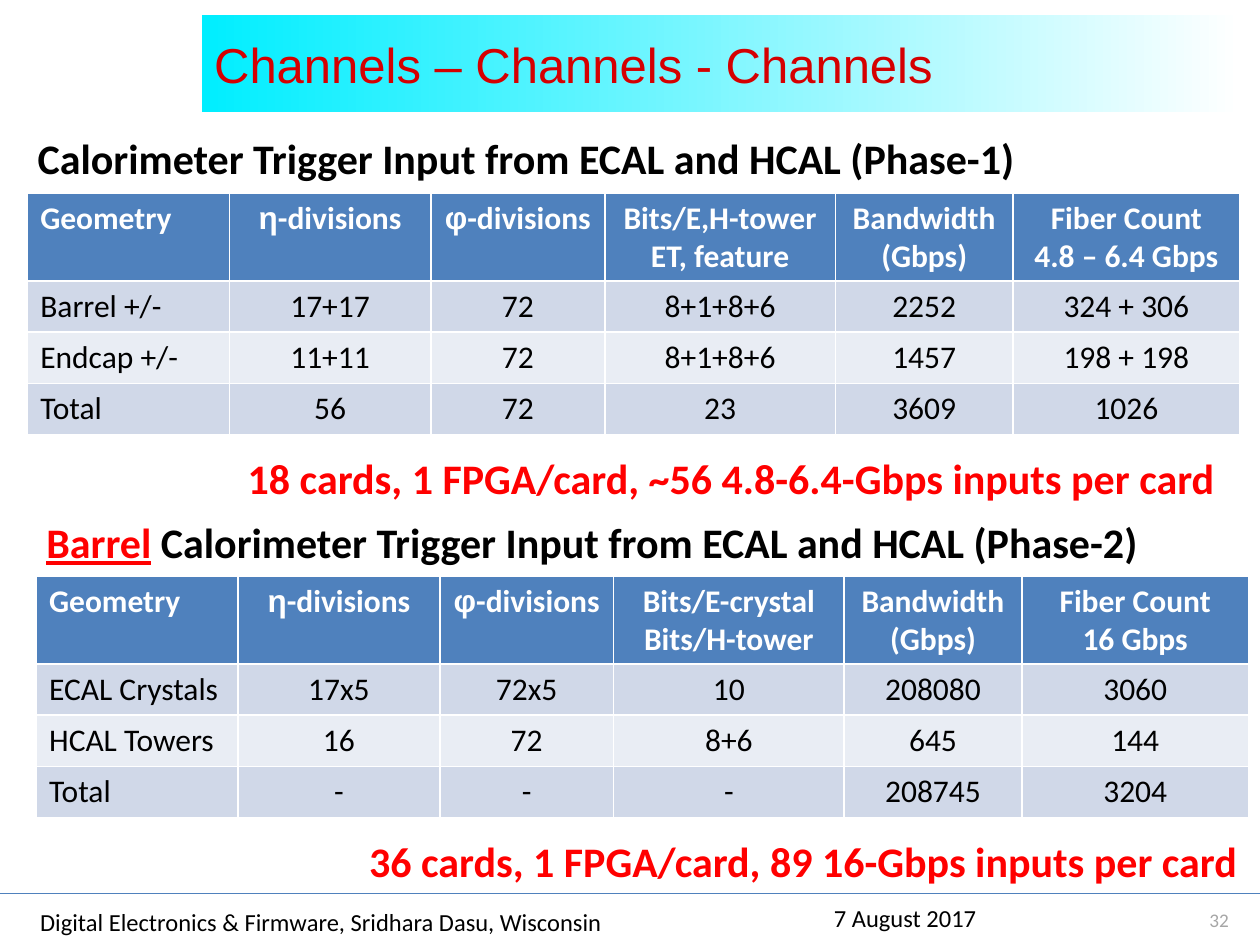
"""Build the slide on calorimeter trigger channel counts for Phase-1 and Phase-2."""
from lxml.etree import SubElement
from pptx import Presentation
from pptx.dml.color import RGBColor
from pptx.enum.shapes import MSO_CONNECTOR
from pptx.enum.text import MSO_ANCHOR as Anchor, PP_ALIGN as Align
from pptx.oxml.ns import qn
from pptx.util import Inches, Pt

BLACK = RGBColor(0x00, 0x00, 0x00)
WHITE = RGBColor(0xFF, 0xFF, 0xFF)
RED = RGBColor(0xFF, 0x00, 0x00)
TITLE_RED = RGBColor(0xD5, 0x00, 0x01)
CYAN = RGBColor(0x00, 0xEE, 0xFF)
BLUE = RGBColor(0x4F, 0x81, 0xBD)
BAND_DARK = RGBColor(0xD0, 0xD8, 0xE8)
BAND_LIGHT = RGBColor(0xE9, 0xED, 0xF4)
GREY = RGBColor(0xA6, 0xA6, 0xA6)

COLUMNS, ROWS = 100, 75
UNIT = Inches(10) / COLUMNS


def grid(*steps):
    return [round(step * UNIT) for step in steps]


def format_text(frame, size, color, bold=False, align=Align.LEFT, font="Calibri"):
    for paragraph in frame.paragraphs:
        paragraph.alignment = align
        for run in paragraph.runs:
            run.font.name = font
            run.font.size = Pt(size)
            run.font.bold = bold
            run.font.color.rgb = color


deck = Presentation()
deck.slide_width, deck.slide_height = grid(COLUMNS, ROWS)
slide = deck.slides.add_slide(deck.slide_layouts[5])
shapes = slide.shapes

footer_rule = shapes.add_connector(MSO_CONNECTOR.STRAIGHT, *grid(0, 70.9, COLUMNS, 70.9))
footer_rule.line.color.rgb = BLUE
footer_rule.line.width = Pt(0.25)
SubElement(footer_rule._element.spPr, qn("a:effectLst"))

title = shapes.title
title.left, title.top, title.width, title.height = grid(16, 1.2, 82.5, 7.7)
title.fill.gradient()
title.fill.gradient_angle = 0
for stop, position, color in zip(title.fill.gradient_stops, (0, 1), (CYAN, WHITE)):
    stop.position = position
    stop.color.rgb = color
title.text_frame.text = "Channels – Channels - Channels"
title.text_frame.vertical_anchor = Anchor.MIDDLE
format_text(title.text_frame, 28, TITLE_RED, font="Arial")

texts = [
    ("Calorimeter Trigger Input from ECAL and HCAL (Phase-1)",
     (2, 10, 83.2, 5), 24, BLACK, True, Align.LEFT),
    ("18 cards, 1 FPGA/card, ~56 4.8-6.4-Gbps inputs per card",
     (14.2, 35.4, 83.2, 5), 24, RED, True, Align.RIGHT),
    ("Barrel| Calorimeter Trigger Input from ECAL and HCAL (Phase-2)",
     (2.7, 40.5, 94, 5), 24, BLACK, True, Align.LEFT),
    ("36 cards, 1 FPGA/card, 89 16-Gbps inputs per card",
     (16, 65.8, 83.2, 5), 24, RED, True, Align.RIGHT),
    ("Digital Electronics & Firmware, Sridhara Dasu, Wisconsin",
     (2.2, 71.5, 62.6, 3), 14, BLACK, False, Align.LEFT),
    ("7 August 2017", (65.2, 71.2, 28.3, 4.3), 14, BLACK, False, Align.LEFT),
    ("32", (93.5, 71, 6.5, 4), 11, GREY, False, Align.CENTER),
]
for words, place, size, color, bold, align in texts:
    frame = shapes.add_textbox(*grid(*place)).text_frame
    frame.word_wrap = True
    for part in words.split("|"):
        frame.paragraphs[0].add_run().text = part
    format_text(frame, size, color, bold, align)
    if words.startswith("Barrel"):
        barrel = frame.paragraphs[0].runs[0]
        barrel.font.color.rgb = RED
        barrel.font.underline = True
    if words == "32":
        frame.vertical_anchor = Anchor.MIDDLE
        frame.margin_left = frame.margin_right = 0

column_widths = grid(16, 16, 13.8, 18.3, 14.1, 18)
row_heights = grid(7, 4.06, 4.06, 4.06)
phases = [
    ((2.2, 15.3), [
        ["Geometry", "η-divisions", "φ-divisions", "Bits/E,H-tower\nET, feature",
         "Bandwidth\n(Gbps)", "Fiber Count\v4.8 – 6.4 Gbps"],
        ["Barrel +/-", "17+17", "72", "8+1+8+6", "2252", "324 + 306"],
        ["Endcap +/-", "11+11", "72", "8+1+8+6", "1457", "198 + 198"],
        ["Total", "56", "72", "23", "3609", "1026"],
    ]),
    ((2.9, 45.7), [
        ["Geometry", "η-divisions", "φ-divisions", "Bits/E-crystal\nBits/H-tower",
         "Bandwidth\n(Gbps)", "Fiber Count\v16 Gbps"],
        ["ECAL Crystals", "17x5", "72x5", "10", "208080", "3060"],
        ["HCAL Towers", "16", "72", "8+6", "645", "144"],
        ["Total", "-", "-", "-", "208745", "3204"],
    ]),
]
fills = [BLUE, BAND_DARK, BAND_LIGHT, BAND_DARK]
for corner, rows in phases:
    table = shapes.add_table(len(rows), len(column_widths), *grid(*corner),
                             sum(column_widths), sum(row_heights)).table
    for column, width in zip(table.columns, column_widths):
        column.width = width
    for r, values in enumerate(rows):
        table.rows[r].height = row_heights[r]
        for c, value in enumerate(values):
            cell = table.cell(r, c)
            cell.fill.solid()
            cell.fill.fore_color.rgb = fills[r]
            frame = cell.text_frame
            greek = value[0] in "ηφ"
            frame.text = value[0] if greek else value
            if greek:
                frame.paragraphs[0].add_run().text = value[1:]
            format_text(frame, 18, BLACK if r else WHITE, r == 0,
                        Align.CENTER if c else Align.LEFT)
            if greek:
                frame.paragraphs[0].runs[0].font.name = "Arial"

deck.save("out.pptx")
